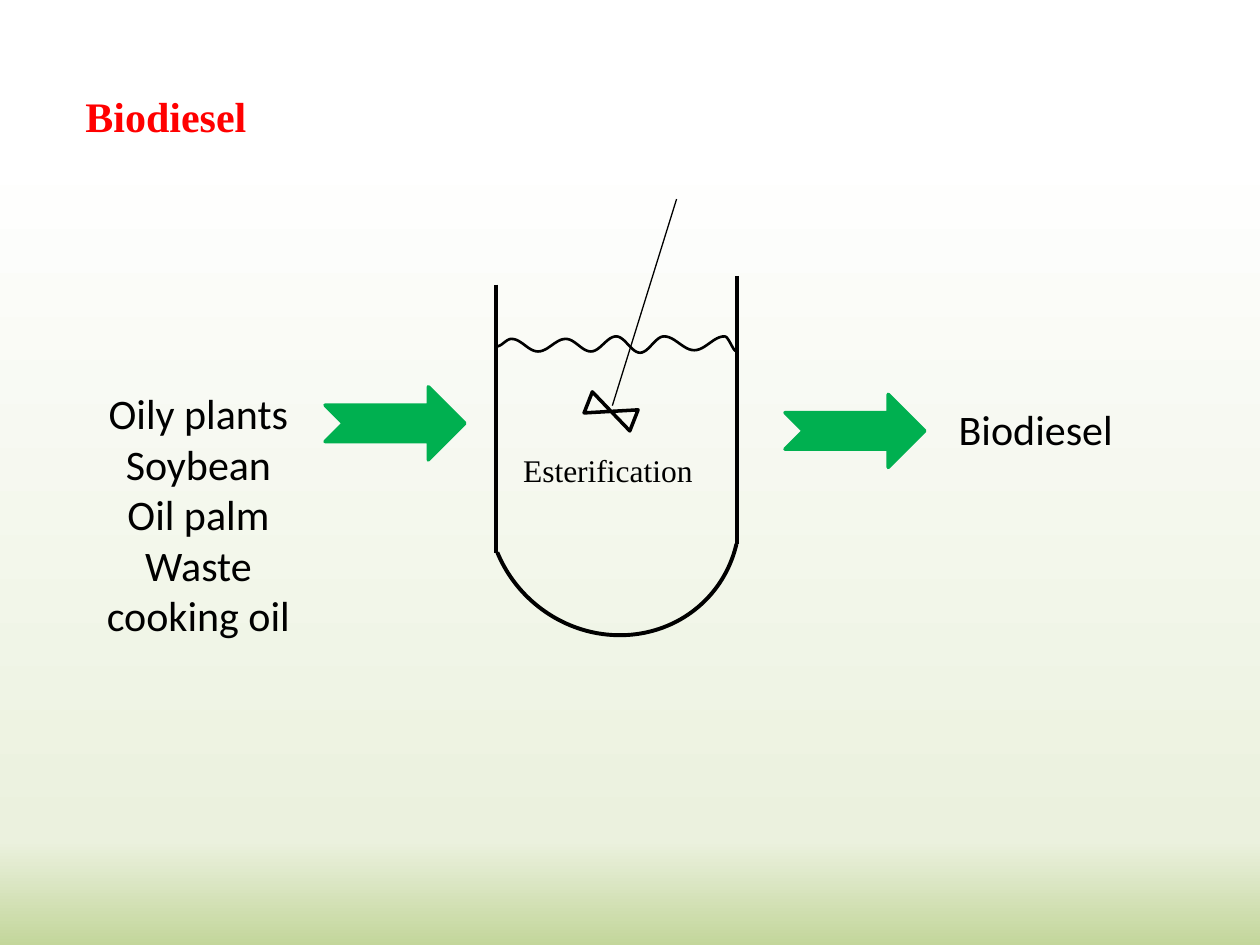
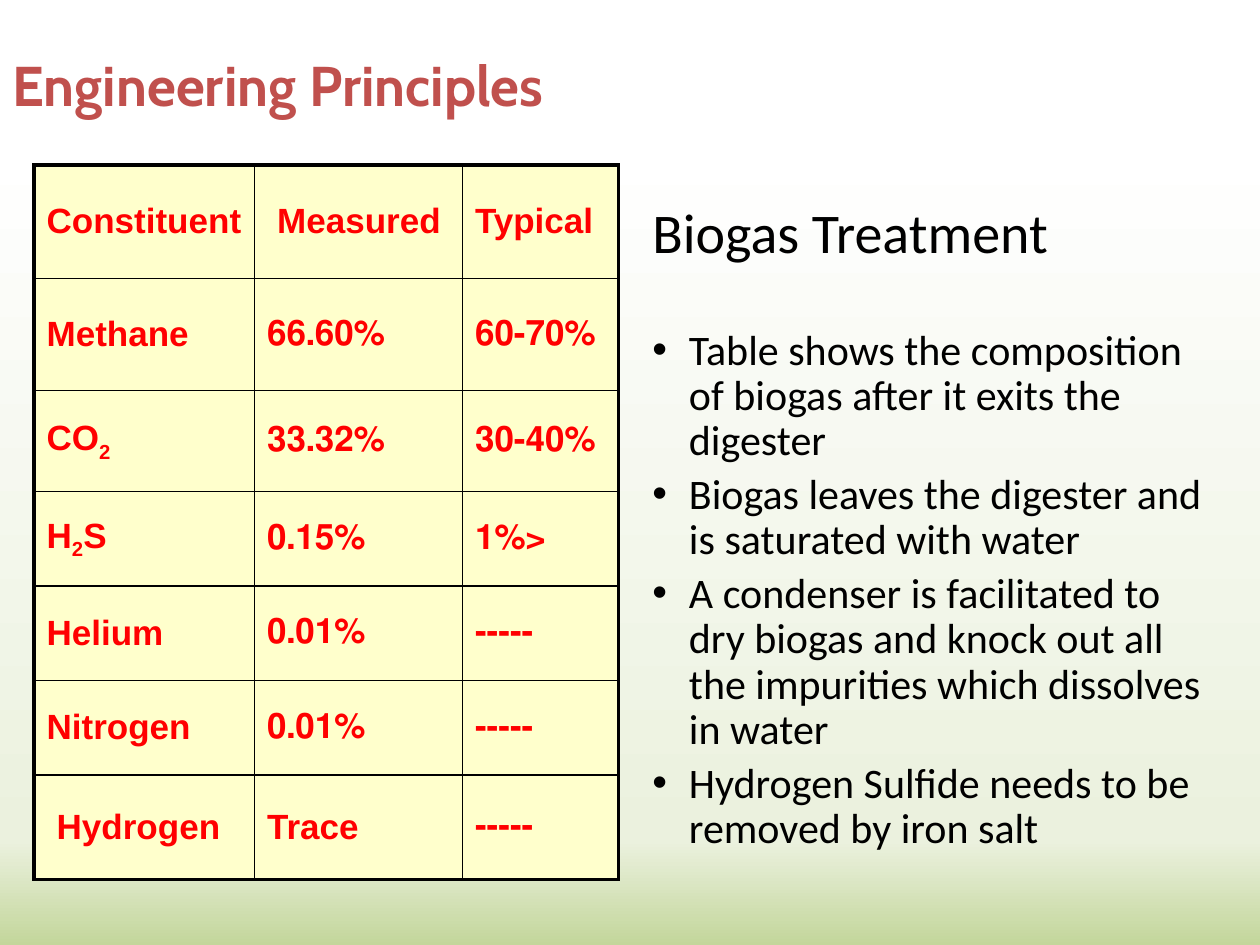
from copy import deepcopy
from itertools import pairwise
from math import cos, pi

from lxml import etree
from pptx import Presentation
from pptx.dml.color import RGBColor
from pptx.enum import shapes, text
from pptx.oxml import ns
from pptx.util import Inches, Pt

BLACK, RED, GREEN = "000000", "FF0000", "00B050"
BACKGROUND = [(0.15, "FFFFFF"), (0.89, "EBF1DE"), (1, "C3D69B")]
OUTER, INNER = 2.25, 1


def color(code):
    return RGBColor.from_string(code)


def add_xml(parent, tag, **attributes):
    return etree.SubElement(parent, ns.qn(tag), attributes)


class Deck:
    """Holds the shared style and draws on the current slide."""

    def __init__(self):
        self.file = Presentation()
        self.file.slide_width, self.file.slide_height = Inches(10), Inches(7.5)

    def new_slide(self):
        self.slide = self.file.slides.add_slide(self.file.slide_layouts[6])
        self.shapes = self.slide.shapes
        fill = self.slide.background.fill
        fill.gradient()
        fill.gradient_angle = 270
        stops = next(self.slide.element.iter(ns.qn("a:gsLst")))
        stops.append(deepcopy(stops[0]))
        for stop, (position, code) in zip(fill.gradient_stops, BACKGROUND):
            stop.position = position
            stop.color.rgb = color(code)

    def font(self, paragraph, size, name="Calibri", code=BLACK, bold=False):
        font = paragraph.font
        font.size, font.name, font.bold = Pt(size), name, bold
        font.color.rgb = color(code)

    def label(self, lines, x, y, width, height, size=24, align="LEFT", wrap=True,
              grow=True, **style):
        frame = self.shapes.add_textbox(*map(Inches, (x, y, width, height))).text_frame
        frame.word_wrap = wrap
        if grow:
            frame.auto_size = text.MSO_AUTO_SIZE.SHAPE_TO_FIT_TEXT
        else:
            frame.vertical_anchor = text.MSO_ANCHOR.MIDDLE
        frame.text = "\n".join(lines)
        for paragraph in frame.paragraphs:
            paragraph.alignment = text.PP_ALIGN[align]
            self.font(paragraph, size, **style)

    def outline(self, shape, width, code=BLACK, fill=None):
        shape.shadow.inherit = False
        shape.line.color.rgb = color(code)
        shape.line.width = Pt(width)
        if fill:
            shape.fill.solid()
            shape.fill.fore_color.rgb = color(fill)
        else:
            shape.fill.background()

    def shape(self, kind, x, y, width, height, line, rotation=0, **colors):
        shape = self.shapes.add_shape(kind, *map(Inches, (x, y, width, height)))
        shape.rotation = rotation
        self.outline(shape, line, **colors)
        return shape

    def line(self, x1, y1, x2, y2, width):
        line = self.shapes.add_connector(
            shapes.MSO_CONNECTOR.STRAIGHT, *map(Inches, (x1, y1, x2, y2)))
        line.line.color.rgb = color(BLACK)
        line.line.width = Pt(width)
        add_xml(line._element.spPr, "a:effectLst")

    def wave(self, turns, width, steps=12):
        points = [(x1 + (x2 - x1) * step / steps,
                   y1 + (y2 - y1) * (1 - cos(pi * step / steps)) / 2)
                  for (x1, y1), (x2, y2) in pairwise(turns)
                  for step in range(1, steps + 1)]
        builder = self.shapes.build_freeform(*map(Inches, turns[0]))
        builder.add_line_segments([(Inches(x), Inches(y)) for x, y in points], close=False)
        self.outline(builder.convert_to_shape(), width)

    def bullets(self, heading, points, x, y, width, height):
        frame = self.shapes.add_textbox(*map(Inches, (x, y, width, height))).text_frame
        frame.word_wrap = True
        frame.text = "\n".join([heading, *points])
        for index, paragraph in enumerate(frame.paragraphs):
            paragraph.line_spacing = 0.9
            if index:
                paragraph.space_before = Pt(36 if index == 1 else 4.8)
                properties = paragraph._p.get_or_add_pPr()
                properties.set("marL", str(Inches(0.29)))
                properties.set("indent", str(-Inches(0.29)))
                add_xml(properties, "a:buFont", typeface="Arial")
                add_xml(properties, "a:buChar", char="•")
            self.font(paragraph, 24 if index else 32)

    def cell(self, cell, content, borders):
        properties = cell._tc.get_or_add_tcPr()
        for side, width in zip("LRTB", borders):
            border = add_xml(properties, f"a:ln{side}", w=str(Pt(width)))
            add_xml(add_xml(border, "a:solidFill"), "a:srgbClr", val=BLACK)
        cell.fill.solid()
        cell.fill.fore_color.rgb = color("FFFFCC")
        cell.vertical_anchor = text.MSO_ANCHOR.MIDDLE
        paragraph = cell.text_frame.paragraphs[0]
        paragraph.alignment = text.PP_ALIGN.LEFT
        paragraph._p.get_or_add_pPr().set("rtl", "1")
        self.font(paragraph, 20, "Arial", RED, True)
        for index, part in enumerate(content.split("_")):
            run = paragraph.add_run()
            run.text = part
            if index % 2:
                run._r.get_or_add_rPr().set("baseline", "-25000")

    def table(self, rows, x, y, widths, heights):
        frame = self.shapes.add_table(
            len(heights), len(widths),
            *map(Inches, (x, y, sum(widths), sum(heights))))
        table = frame.table
        table.first_row = table.horz_banding = False
        for column, width in zip(table.columns, widths):
            column.width = Inches(width)
        for row, height in zip(table.rows, heights):
            row.height = Inches(height)
        for r, row in enumerate(rows):
            for c, content in enumerate(row):
                edges = (c == 0, c == len(widths) - 1, r == 0, r == len(heights) - 1)
                self.cell(table.cell(r, c), content,
                          [OUTER if edge else INNER for edge in edges])
        return table


def biodiesel(deck):
    deck.new_slide()
    deck.label(["Biodiesel"], 0.58, 0.67, 1.49, 0.5, wrap=False,
               name="Times New Roman", code=RED, bold=True)
    for x, y in [(2.58, 3.07), (6.23, 3.13)]:
        deck.shape(shapes.MSO_SHAPE.NOTCHED_RIGHT_ARROW, x, y, 1.11, 0.58, 2,
                   code=GREEN, fill=GREEN)
    deck.label(["Esterification"], 3.89, 3.53, 1.87, 0.4, 18, "CENTER",
               name="Times New Roman")
    deck.label(["Biodiesel"], 7.51, 3.15, 1.78, 0.5)
    deck.label(["Oily plants", "Soybean", "Oil palm", "Waste cooking oil"],
               0.58, 3.03, 1.99, 2.12, align="CENTER")

    vessel_bottom = deck.shape(shapes.MSO_SHAPE.ARC, 3.9, 3.03, 1.94, 2.04, 2.25, 130.3)
    vessel_bottom.adjustments[0] = 147
    vessel_bottom.adjustments[1] = 17.91
    for x, top in [(5.85, 2.19), (3.94, 2.26)]:
        deck.line(x, top, x, top + 2.13, 2.25)
    deck.wave([(3.94, 2.75), (4.06, 2.69), (4.27, 2.79), (4.49, 2.69), (4.69, 2.79),
               (4.89, 2.67), (5.08, 2.8), (5.27, 2.67), (5.51, 2.78), (5.75, 2.67),
               (5.85, 2.79)], 1.5)
    deck.line(5.37, 1.58, 4.86, 3.22, 0.75)
    deck.shape(shapes.MSO_SHAPE.FLOWCHART_COLLATE, 4.76, 3.07, 0.18, 0.39, 2, 291.5)


def engineering_principles(deck):
    deck.new_slide()
    deck.bullets("Biogas Treatment", [
        "Table shows the composition of biogas after it exits the digester",
        "Biogas leaves the digester and is saturated with water",
        "A condenser is facilitated to dry biogas and knock out all the impurities "
        "which dissolves in water",
        "Hydrogen Sulfide needs to be removed by iron salt",
    ], 5.08, 1.58, 4.67, 5.42)
    composition = deck.table([
        ("Constituent", "Measured", "Typical"),
        ("Methane", "66.60%", "60-70%"),
        ("CO_2", "33.32%", "30-40%"),
        ("H_2_S", "0.15%", "<1%"),
        ("Helium", "0.01%", "-----"),
        ("Nitrogen", "0.01%", "-----"),
        ("Hydrogen", "Trace", "-----"),
    ], 0.27, 1.31, [1.75, 1.65, 1.24], [0.9, 0.89, 0.8, 0.75, 0.75, 0.75, 0.83])
    for row, column in [(0, 1), (6, 0)]:
        composition.cell(row, column).margin_left = Inches(0.18)
    deck.label(["Engineering Principles"], 0, 0.28, 9.61, 0.77, 32, grow=False,
               name="Cabin", code="C0504D", bold=True)


def main():
    deck = Deck()
    biodiesel(deck)
    engineering_principles(deck)
    deck.file.save("out.pptx")


if __name__ == "__main__":
    main()
